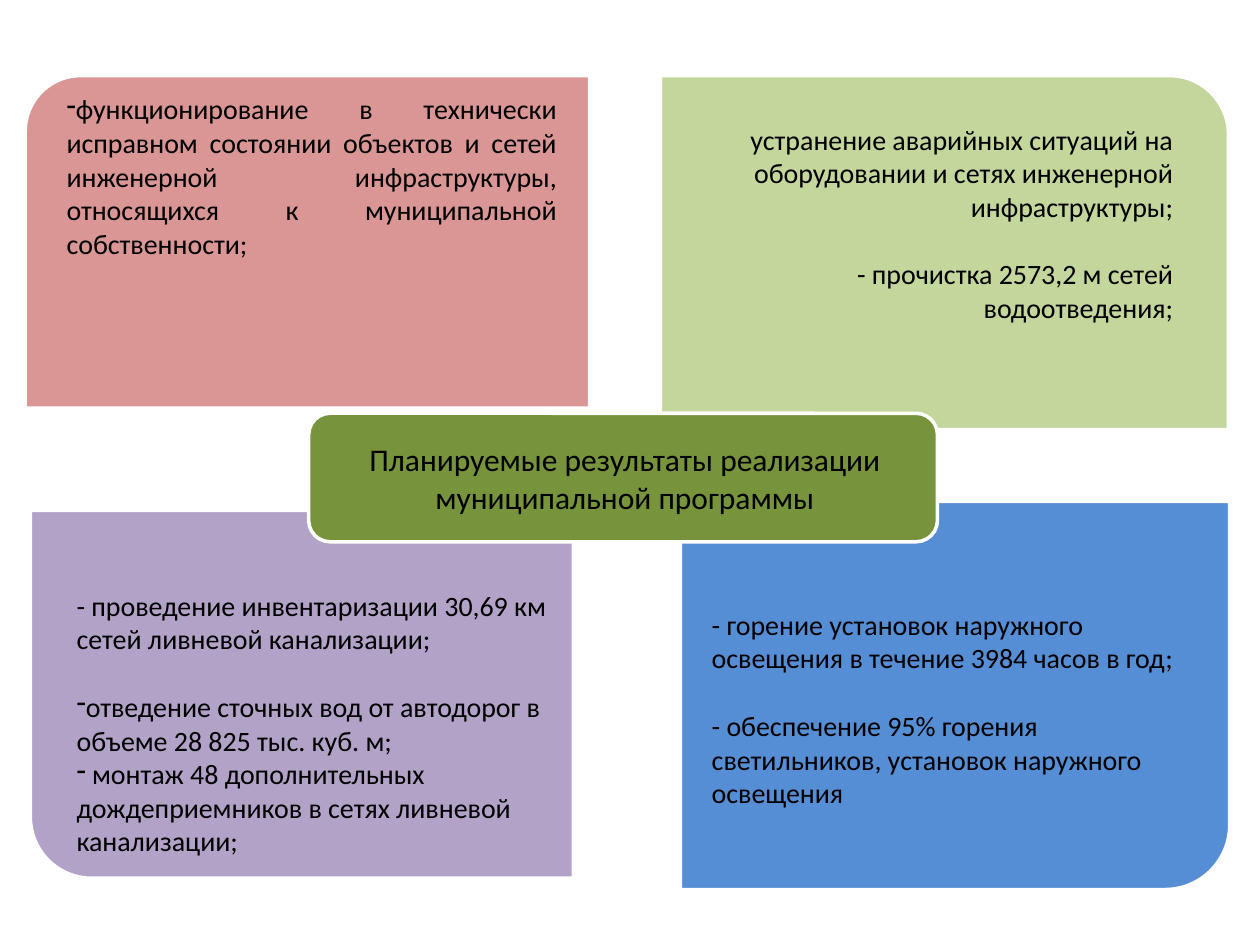
from dataclasses import dataclass

from lxml import etree
from pptx import Presentation
from pptx import util as u
from pptx.dml.color import RGBColor
from pptx.enum import shapes, text
from pptx.oxml import ns

COLUMNS, ROWS = 100, 75
LINE_GAP = 19.5


@dataclass(frozen=True)
class Area:
    column: float
    row: float
    columns: float
    rows: float


@dataclass(frozen=True)
class Panel:
    area: Area
    fill: str
    turn: int = 0
    kind: shapes.MSO_SHAPE = shapes.MSO_SHAPE.ROUND_1_RECTANGLE


@dataclass(frozen=True)
class Line:
    wording: str
    bullet: bool = False
    gap: bool = False


@dataclass(frozen=True)
class Note:
    area: Area
    align: text.PP_ALIGN
    lines: tuple[Line, ...]
    size: int = 16


PANELS = (
    Panel(Area(2, 6, 44.8, 26.4), "D99694", 270),
    Panel(Area(52.4, 6, 45.1, 28.1), "C3D69B"),
    Panel(Area(2.4, 40.5, 43.1, 29.2), "B3A2C7", 180),
    Panel(Area(54, 39.8, 43.6, 30.8), "558ED5", 90),
    Panel(Area(24.5, 32.8, 49.9, 10.2), "77933C", kind=shapes.MSO_SHAPE.ROUNDED_RECTANGLE),
)

HEADING = Note(Area(24.8, 34.4, 49.6, 7.1), text.PP_ALIGN.CENTER, (
    Line("Планируемые результаты реализации муниципальной программы"),
), 18)

NOTES = (
    Note(Area(4.3, 6.8, 40.9, 17.2), text.PP_ALIGN.JUSTIFY, (
        Line("функционирование в технически исправном состоянии объектов и сетей "
             "инженерной инфраструктуры, относящихся к муниципальной собственности;", bullet=True),
    )),
    Note(Area(53.9, 9.2, 40.2, 22.6), text.PP_ALIGN.RIGHT, (
        Line("устранение аварийных ситуаций на оборудовании и сетях инженерной инфраструктуры;"),
        Line("- прочистка 2573,2 м сетей водоотведения;", gap=True),
    )),
    Note(Area(55.5, 47.7, 40.9, 17.2), text.PP_ALIGN.LEFT, (
        Line("- горение установок наружного освещения в течение 3984 часов в год;"),
        Line("- обеспечение 95% горения светильников, установок наружного освещения", gap=True),
    )),
    Note(Area(5.1, 46.2, 39.4, 22.6), text.PP_ALIGN.LEFT, (
        Line("- проведение инвентаризации 30,69 км сетей ливневой канализации;"),
        Line("отведение сточных вод от автодорог в объеме 28 825 тыс. куб. м;", bullet=True, gap=True),
        Line(" монтаж 48 дополнительных дождеприемников в сетях ливневой канализации;", bullet=True),
    )),
)


def colour(value: str) -> RGBColor:
    return RGBColor.from_string(value)


def apply(target, values: dict) -> None:
    for name, value in values.items():
        setattr(target, name, value)


def frame(presentation, area: Area) -> dict:
    column = presentation.slide_width / COLUMNS
    row = presentation.slide_height / ROWS
    return {
        "left": u.Emu(round(area.column * column)),
        "top": u.Emu(round(area.row * row)),
        "width": u.Emu(round(area.columns * column)),
        "height": u.Emu(round(area.rows * row)),
    }


def draw_panel(presentation, slide, panel: Panel) -> None:
    area = panel.area
    if panel.turn % 180:
        shift = (area.columns - area.rows) / 2
        area = Area(area.column + shift, area.row - shift, area.rows, area.columns)
    shape = slide.shapes.add_shape(panel.kind, **frame(presentation, area))
    shape.rotation = panel.turn
    shape.shadow.inherit = False
    shape.fill.solid()
    shape.fill.fore_color.rgb = colour(panel.fill)
    shape.line.color.rgb = colour("FFFFFF")
    shape.line.width = u.Pt(2)


def add_bullet(paragraph) -> None:
    properties = paragraph._p.get_or_add_pPr()
    apply_indent = {"marL": "0", "indent": "0"}
    for name, value in apply_indent.items():
        properties.set(name, value)
    etree.SubElement(properties, ns.qn("a:buFontTx"))
    etree.SubElement(properties, ns.qn("a:buChar")).set("char", "-")


def write_note(shape, note: Note) -> None:
    text_frame = shape.text_frame
    apply(text_frame, {
        "word_wrap": True,
        "auto_size": text.MSO_AUTO_SIZE.NONE,
        "vertical_anchor": text.MSO_ANCHOR.TOP,
        "margin_left": u.Inches(0.1),
        "margin_right": u.Inches(0.1),
        "margin_top": u.Inches(0.05),
        "margin_bottom": u.Inches(0.05),
    })
    for index, line in enumerate(note.lines):
        paragraph = text_frame.add_paragraph() if index else text_frame.paragraphs[0]
        run = paragraph.add_run()
        run.text = line.wording
        if line.bullet:
            add_bullet(paragraph)
        paragraph.alignment = note.align
        if line.gap:
            paragraph.space_before = u.Pt(LINE_GAP)
        for font in (paragraph.font, run.font):
            apply(font, {"name": "Calibri", "size": u.Pt(note.size)})
            font.color.rgb = colour("000000")


def main() -> None:
    presentation = Presentation()
    apply(presentation, {"slide_width": u.Inches(10), "slide_height": u.Inches(7.5)})
    slide = presentation.slides.add_slide(presentation.slide_layouts[5])
    for panel in PANELS:
        draw_panel(presentation, slide, panel)
    title = slide.shapes.title
    apply(title, frame(presentation, HEADING.area))
    title.element.getparent().append(title.element)
    write_note(title, HEADING)
    for note in NOTES:
        write_note(slide.shapes.add_textbox(**frame(presentation, note.area)), note)
    presentation.save("out.pptx")


if __name__ == "__main__":
    main()
